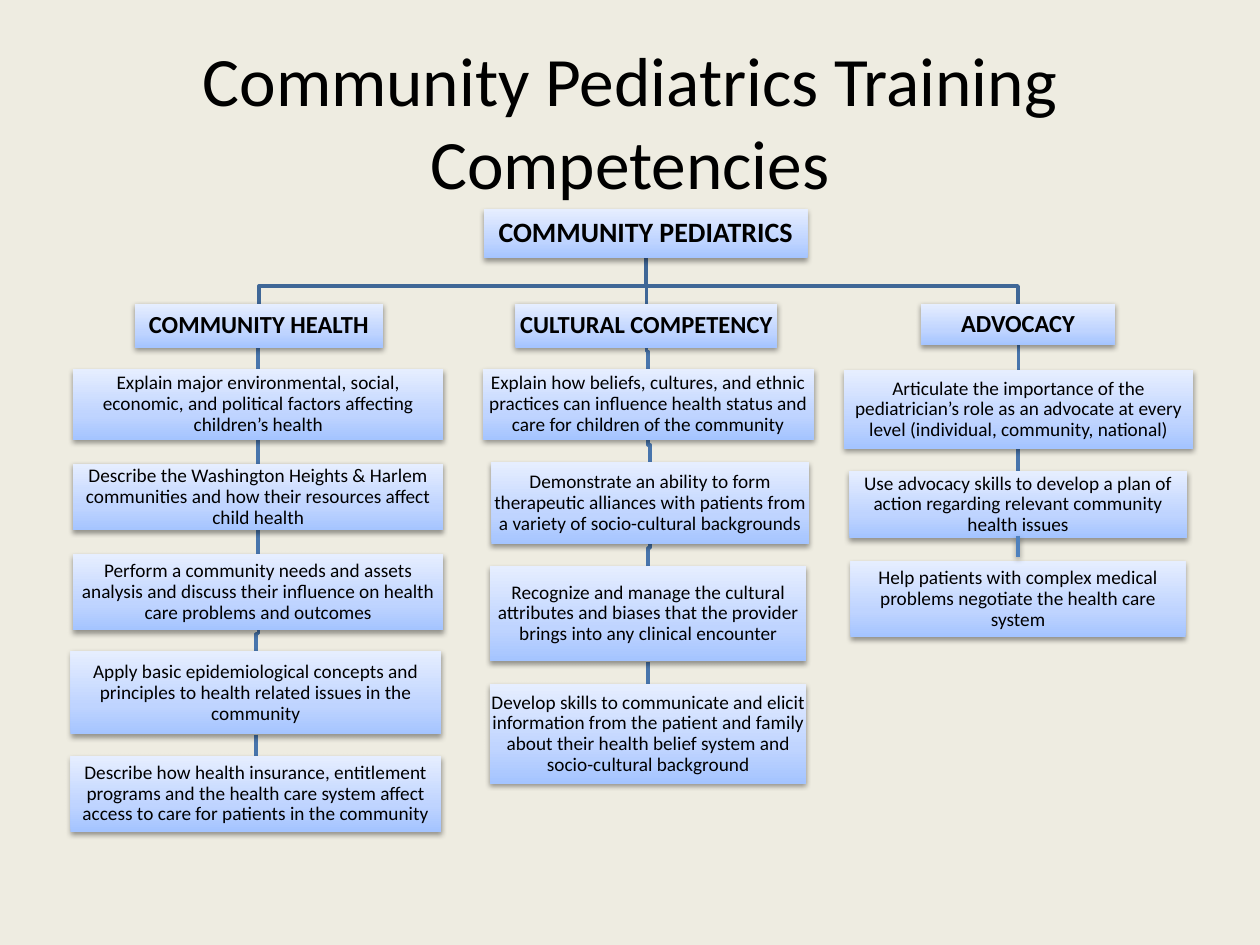
from lxml import etree
from pptx import Presentation
from pptx.dml.color import RGBColor
from pptx.enum.shapes import MSO_CONNECTOR, MSO_SHAPE
from pptx.enum.text import MSO_ANCHOR, PP_ALIGN
from pptx.oxml.ns import qn
from pptx.util import Inches, Pt

RECTANGLE = MSO_SHAPE.RECTANGLE
STRAIGHT = MSO_CONNECTOR.STRAIGHT
CENTER = PP_ALIGN.CENTER
MIDDLE = MSO_ANCHOR.MIDDLE

FONT = "Calibri"
COLORS = {
    "background": "EEECE1",
    "text": "000000",
    "box_bottom": "A4C4FF",
    "box_middle": "BFD4FF",
    "box_top": "E6EEFF",
    "branch": "3F6797",
    "chain": "4875AC",
    "last_link": "4F81BD",
    "shadow": "000000",
}
BOX_GRADIENT = [(0, "box_bottom"), (35, "box_middle"), (100, "box_top")]
BEND = 0.14  # height of a link's bend above the lower box

# Each box: text, (left, top, width, height)
ROOT = ("COMMUNITY PEDIATRICS", (3.84, 1.66, 2.57, 0.39))
BRANCHES = [
    [
        ("COMMUNITY HEALTH", (1.07, 2.41, 1.97, 0.35)),
        ("Explain major environmental, social, economic, and political "
         "factors affecting children’s health", (0.58, 2.93, 2.94, 0.56)),
        ("Describe the Washington Heights & Harlem communities and how "
         "their resources affect child health", (0.58, 3.68, 2.94, 0.53)),
        ("Perform a community needs and assets analysis and discuss their "
         "influence on health care problems and outcomes",
         (0.58, 4.4, 2.94, 0.6)),
        ("Apply basic epidemiological concepts and principles to health "
         "related issues in the community", (0.56, 5.17, 2.94, 0.66)),
        ("Describe how health insurance, entitlement programs and the "
         "health care system affect access to care for patients in the "
         "community", (0.56, 6, 2.94, 0.6)),
    ],
    [
        ("CULTURAL COMPETENCY", (4.09, 2.41, 2.08, 0.35)),
        ("Explain how beliefs, cultures, and ethnic practices can influence "
         "health status and care for children of the community",
         (3.83, 2.93, 2.63, 0.56)),
        ("Demonstrate an ability to form therapeutic alliances with patients "
         "from a variety of socio-cultural backgrounds",
         (3.9, 3.67, 2.52, 0.65)),
        ("Recognize and manage the cultural attributes and biases that the "
         "provider brings into any clinical encounter",
         (3.89, 4.49, 2.51, 0.76)),
        ("Develop skills to communicate and elicit information from the "
         "patient and family about their health belief system and "
         "socio-cultural background", (3.89, 5.43, 2.51, 0.79)),
    ],
    [
        ("ADVOCACY", (7.31, 2.41, 1.54, 0.33)),
        ("Articulate the importance of the pediatrician’s role as an "
         "advocate at every level (individual, community, national)",
         (6.7, 2.94, 2.77, 0.62)),
        ("Use advocacy skills to develop a plan of action regarding relevant "
         "community health issues", (6.74, 3.74, 2.68, 0.53)),
        ("Help patients with complex medical problems negotiate the health "
         "care system", (6.75, 4.45, 2.66, 0.61)),
    ],
]


def rgb(name):
    return RGBColor.from_string(COLORS[name])


def format_text(frame, size, bold=False):
    paragraph = frame.paragraphs[0]
    paragraph.alignment = CENTER
    font = paragraph.runs[0].font
    font.name, font.size, font.bold = FONT, Pt(size), bold
    font.color.rgb = rgb("text")


def add_color(parent, name):
    return etree.SubElement(parent, qn("a:srgbClr"), val=COLORS[name])


def add_soft_shadow(properties):
    """Put a soft shadow straight below into the shape's effect list."""
    effects = properties.find(qn("a:effectLst"))
    if effects is None:
        effects = etree.SubElement(properties, qn("a:effectLst"))
    shadow = etree.SubElement(
        effects, qn("a:outerShdw"), blurRad=str(Pt(3.1)), dist=str(Pt(1.6)),
        dir="5400000", rotWithShape="0")
    etree.SubElement(add_color(shadow, "shadow"), qn("a:alpha"), val="38000")


def fill_gradient(shape):
    shape.fill.gradient()
    shape.fill.gradient_angle = 90
    stops = shape._element.spPr.find(".//" + qn("a:gsLst"))
    for stop in list(stops):
        stops.remove(stop)
    for percent, color in BOX_GRADIENT:
        stop = etree.SubElement(stops, qn("a:gs"), pos=str(percent * 1000))
        add_color(stop, color)


def add_title(slide, text):
    title = slide.shapes.title
    title.left, title.top = Inches(0.75), Inches(0.33)
    title.width, title.height = Inches(8.5), Inches(1.25)
    title.text_frame.text = text
    title.text_frame.vertical_anchor = MIDDLE
    format_text(title.text_frame, 39.6)


def add_box(slide, box, size, bold=False):
    text, bounds = box
    shape = slide.shapes.add_shape(RECTANGLE, *map(Inches, bounds))
    fill_gradient(shape)
    shape.line.fill.background()
    shape.shadow.inherit = False
    add_soft_shadow(shape._element.spPr)
    frame = shape.text_frame
    frame.text = text
    frame.word_wrap = True
    frame.vertical_anchor = MIDDLE
    frame.margin_left = frame.margin_right = Inches(0.01)
    frame.margin_top = frame.margin_bottom = Inches(0.01)
    format_text(frame, size, bold)
    frame.paragraphs[0].line_spacing = 0.9


def style_line(shape, color):
    shape.line.color.rgb = rgb(color)
    shape.line.width = Pt(2)


def add_straight_line(slide, x, top, bottom, color):
    line = slide.shapes.add_connector(
        STRAIGHT, Inches(x), Inches(top), Inches(x), Inches(bottom))
    style_line(line, color)
    etree.SubElement(line._element.spPr, qn("a:effectLst"))
    return line


def add_link(slide, upper, lower, color):
    """Join the bottom centre of one box to the top centre of the next."""
    left, top, width, height = upper[1]
    start_x, start_y = left + width / 2, top + height
    left, end_y, width, _ = lower[1]
    end_x = left + width / 2
    if abs(end_x - start_x) < 0.01:
        add_straight_line(slide, end_x, start_y, end_y, color)
        return
    bend_y = end_y - BEND
    builder = slide.shapes.build_freeform(
        Inches(start_x), Inches(start_y), scale=1.0)
    corners = [(start_x, bend_y), (end_x, bend_y), (end_x, end_y)]
    builder.add_line_segments(
        [(Inches(x), Inches(y)) for x, y in corners], close=False)
    link = builder.convert_to_shape()
    link.fill.background()
    style_line(link, color)
    link.shadow.inherit = False


def main():
    prs = Presentation()
    prs.slide_width, prs.slide_height = Inches(10), Inches(7.5)
    slide = prs.slides.add_slide(prs.slide_layouts[5])
    slide.background.fill.solid()
    slide.background.fill.fore_color.rgb = rgb("background")
    add_title(slide, "Community Pediatrics Training Competencies")

    # Links lie behind the boxes
    for branch in BRANCHES:
        add_link(slide, ROOT, branch[0], "branch")
        # The last advocacy link is a separate line in front
        chain = branch[:-1] if branch is BRANCHES[-1] else branch
        for upper, lower in zip(chain, chain[1:]):
            add_link(slide, upper, lower, "chain")

    # Boxes of the hierarchy
    add_box(slide, ROOT, 16, bold=True)
    for heading, *competencies in BRANCHES:
        add_box(slide, heading, 14, bold=True)
        for competency in competencies:
            add_box(slide, competency, 11)

    # Last advocacy link
    last_link = add_straight_line(slide, 8.08, 4.25, 4.42, "last_link")
    add_soft_shadow(last_link._element.spPr)

    prs.save("out.pptx")


if __name__ == "__main__":
    main()
